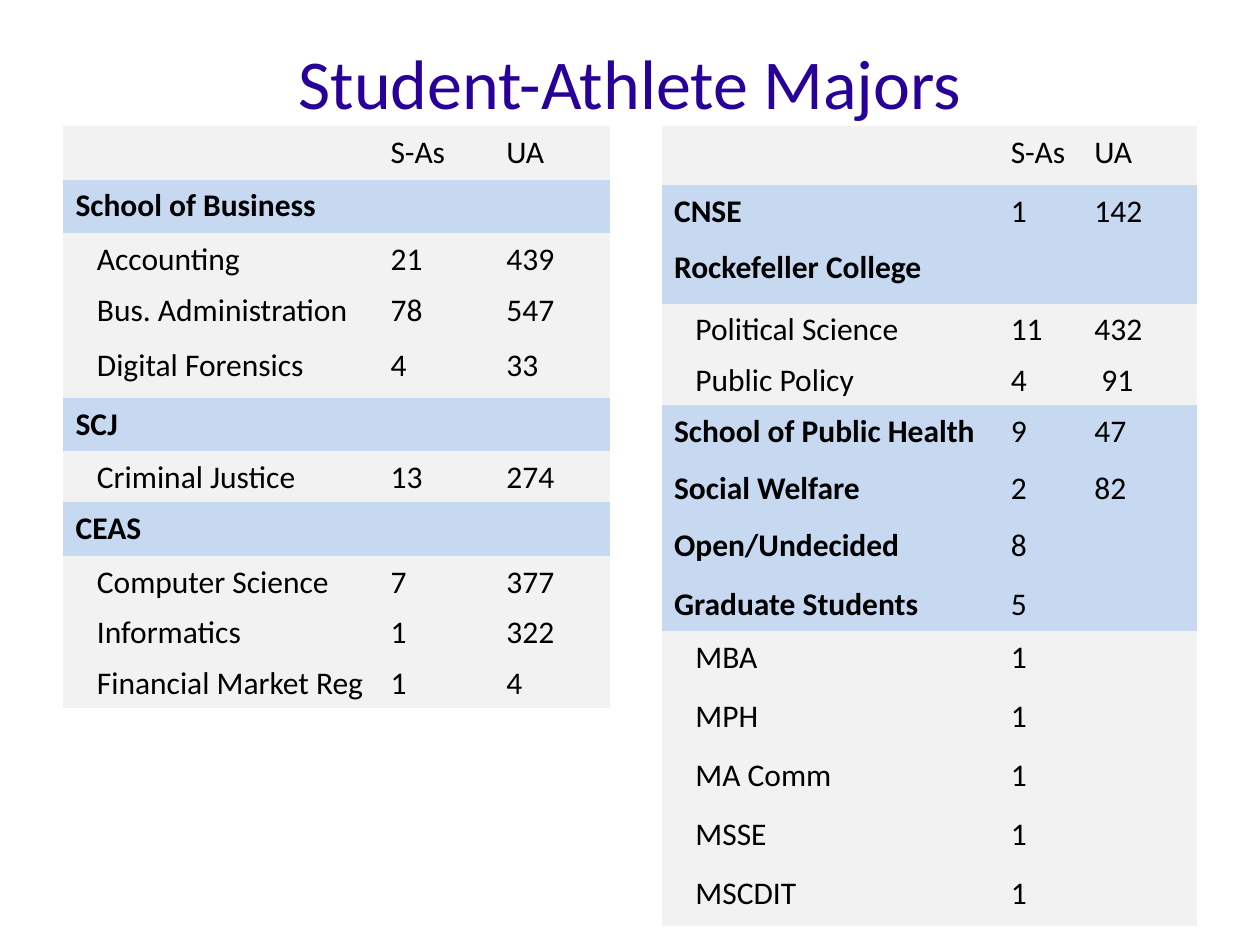
from dataclasses import dataclass

import pptx
import pptx.dml.color
import pptx.enum.text
import pptx.util

Pt = pptx.util.Pt
Color = pptx.dml.color.RGBColor


@dataclass(frozen=True)
class Theme:
    font: str = "Calibri"
    title_size: float = 40
    body_size: float = 18
    title: Color = Color(0x28, 0x00, 0x99)
    text: Color = Color(0x00, 0x00, 0x00)
    school: Color = Color(0xC6, 0xD9, 0xF1)
    major: Color = Color(0xF2, 0xF2, 0xF2)
    indent: float = 12.2
    line_spacing: float = 0.93


@dataclass(frozen=True)
class Row:
    name: str
    athletes: str = ""
    university: str = ""
    height: float = 29.1
    is_school: bool = False
    university_indent: float = 0


@dataclass(frozen=True)
class MajorsTable:
    left: float
    widths: tuple[float, ...]
    rows: tuple[Row, ...]


THEME = Theme()
TABLE_TOP = 72
NO_STYLE_NO_GRID = "{2D5ABB26-0587-4C30-8999-92F81FD0307C}"

TABLES = (
    MajorsTable(36, (180, 66.2, 66.2), (
        Row("", "S-As", "UA"),
        Row("School of Business", height=30.3, is_school=True),
        Row("Accounting", "21", "439"),
        Row("Bus. Administration", "78", "547", 31.4),
        Row("Digital Forensics", "4", "33", 33.7),
        Row("SCJ", height=30.3, is_school=True),
        Row("Criminal Justice", "13", "274"),
        Row("CEAS", height=30.3, is_school=True),
        Row("Computer Science", "7", "377"),
        Row("Informatics", "1", "322"),
        Row("Financial Market Reg", "1", "4"),
    )),
    MajorsTable(378, (192.4, 47.8, 65.6), (
        Row("", "S-As", "UA", 33.7),
        Row("CNSE", "1", "142", 32.4, True),
        Row("Rockefeller College", height=35.4, is_school=True),
        Row("Political Science", "11", "432"),
        Row("Public Policy", "4", "91", university_indent=4),
        Row("School of Public Health", "9", "47", 32.4, True),
        Row("Social Welfare", "2", "82", 32.4, True),
        Row("Open/Undecided", "8", "", 33.7, True),
        Row("Graduate Students", "5", "", 30.3, True),
        *(Row(degree, "1", "", 33.7)
          for degree in ("MBA", "MPH", "MA Comm", "MSSE", "MSCDIT")),
    )),
)


def add_span(para, text: str, size: float, color: Color, bold: bool = False) -> None:
    span = para.add_run()
    span.text = text
    span.font.name = THEME.font
    span.font.size = Pt(size)
    span.font.bold = bold
    span.font.color.rgb = color


def fill_cell(cell, text: str, fill: Color, bold: bool, indent: float) -> None:
    cell.fill.solid()
    cell.fill.fore_color.rgb = fill
    cell.margin_left = cell.margin_right = Pt(7.2)
    cell.margin_top, cell.margin_bottom = Pt(5), Pt(3.6)
    para = cell.text_frame.paragraphs[0]
    para.line_spacing = THEME.line_spacing
    if indent:
        para._p.get_or_add_pPr().set("marL", str(Pt(indent)))
    if text:
        add_span(para, text, THEME.body_size, THEME.text, bold)


def draw_title(page, text: str) -> None:
    box = page.shapes.title
    box.left, box.top, box.width, box.height = Pt(36), Pt(21.6), Pt(648), Pt(50.4)
    frame = box.text_frame
    frame.margin_left = frame.margin_right = frame.margin_top = frame.margin_bottom = 0
    frame.vertical_anchor = pptx.enum.text.MSO_ANCHOR.MIDDLE
    frame.auto_size = pptx.enum.text.MSO_AUTO_SIZE.NONE
    para = frame.paragraphs[0]
    para.alignment = pptx.enum.text.PP_ALIGN.CENTER
    add_span(para, text, THEME.title_size, THEME.title)


def draw_table(page, majors: MajorsTable) -> None:
    table = page.shapes.add_table(
        len(majors.rows), len(majors.widths), Pt(majors.left), Pt(TABLE_TOP),
        Pt(sum(majors.widths)), Pt(sum(row.height for row in majors.rows))).table
    table.first_row = table.horz_banding = False
    table._tbl.tblPr.find(pptx.oxml.ns.qn("a:tableStyleId")).text = NO_STYLE_NO_GRID
    for column, width in zip(table.columns, majors.widths):
        column.width = Pt(width)
    for index, row in enumerate(majors.rows):
        table.rows[index].height = Pt(row.height)
        fill = THEME.school if row.is_school else THEME.major
        name_indent = 0 if row.is_school else THEME.indent
        fill_cell(table.cell(index, 0), row.name, fill, row.is_school, name_indent)
        fill_cell(table.cell(index, 1), row.athletes, fill, False, 0)
        fill_cell(table.cell(index, 2), row.university, fill, False, row.university_indent)


def main() -> None:
    deck = pptx.Presentation()
    deck.slide_width, deck.slide_height = Pt(720), Pt(540)
    page = deck.slides.add_slide(deck.slide_layouts[5])
    draw_title(page, "Student-Athlete Majors")
    for majors in TABLES:
        draw_table(page, majors)
    deck.save("out.pptx")


if __name__ == "__main__":
    main()
